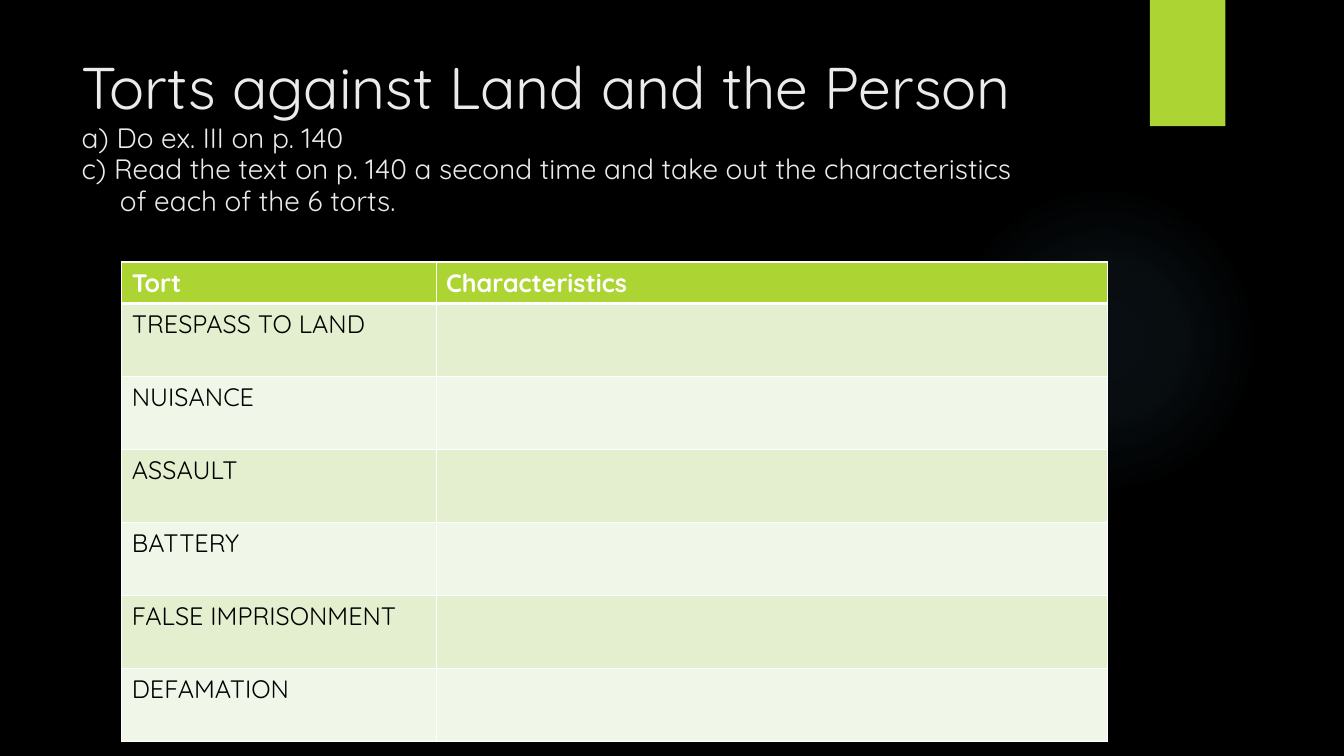
from lxml import etree
from pptx import Presentation
from pptx.dml.color import RGBColor
from pptx.enum.shapes import MSO_SHAPE as Shape
from pptx.enum.text import MSO_ANCHOR as Anchor, MSO_AUTO_SIZE as AutoSize, PP_ALIGN as Align
from pptx.oxml import parse_xml
from pptx.oxml.ns import nsdecls, qn
from pptx.util import Cm, Pt

TORTS = ["TRESPASS TO LAND", "NUISANCE", "ASSAULT", "BATTERY",
         "FALSE IMPRISONMENT", "DEFAMATION"]


def color(hex_string):
    return RGBColor.from_string(hex_string)


class TortSlide:
    FONT = "Quicksand"
    ACCENT, GLOW, LIGHT = "ACD433", "7AC4F0", "EBEBEB"
    WHITE, BLACK = "FFFFFF", "000000"
    BANDS = ["E3EFCE", "F1F7E8"]

    def __init__(self, deck):
        self.slide = deck.slides.add_slide(deck.slide_layouts[5])
        background = self.slide.background.fill
        background.solid()
        background.fore_color.rgb = color(self.BLACK)

    def style(self, paragraph, size, ink, bold=False):
        font = paragraph.font
        font.name, font.size, font.bold = self.FONT, Pt(size), bold
        font.color.rgb = color(ink)

    def block(self, kind, left, top, width, height):
        shape = self.slide.shapes.add_shape(kind, Cm(left), Cm(top), Cm(width), Cm(height))
        shape.shadow.inherit = False
        shape.line.fill.background()
        shape.fill.solid()
        shape.fill.fore_color.rgb = color(self.ACCENT)
        return shape

    def glow(self, left, top, size):
        halo = self.block(Shape.OVAL, left, top, size, size)
        stops = "".join(
            f'<a:gs pos="{place * 1000}"><a:srgbClr val="{self.GLOW}">'
            f'<a:alpha val="{opacity * 1000}"/></a:srgbClr></a:gs>'
            for place, opacity in [(0, 7), (36, 6), (69, 0), (100, 0)])
        gradient = parse_xml(
            f'<a:gradFill {nsdecls("a")} rotWithShape="1"><a:gsLst>{stops}</a:gsLst>'
            '<a:path path="circle"><a:fillToRect l="50000" t="50000" r="50000" b="50000"/>'
            '</a:path></a:gradFill>')
        properties = halo.element.spPr
        properties.replace(properties.find(qn("a:solidFill")), gradient)

    def title(self, heading, tasks, left, top, width, height):
        holder = self.slide.shapes.title
        holder.left, holder.top, holder.width, holder.height = map(Cm, (left, top, width, height))
        frame = holder.text_frame
        frame.word_wrap, frame.auto_size = True, AutoSize.NONE
        frame.vertical_anchor = Anchor.TOP
        frame.text = "\n".join([heading, *tasks])
        for number, paragraph in enumerate(frame.paragraphs):
            paragraph.alignment = Align.LEFT
            paragraph.line_spacing = 0.95
            paragraph.space_before = Pt(0)
            if number:
                # Hanging indent for the lettered tasks
                layout = paragraph._p.get_or_add_pPr()
                layout.set("marL", str(Cm(0.97)))
                layout.set("indent", str(-Cm(0.97)))
            self.style(paragraph, 20 if number else 42, self.LIGHT)

    def border(self, cell, side, width):
        line = etree.SubElement(cell._tc.get_or_add_tcPr(), qn(f"a:{side}"), w=str(Pt(width)))
        fill = etree.SubElement(line, qn("a:solidFill"))
        etree.SubElement(fill, qn("a:srgbClr"), val=self.WHITE)

    def table(self, rows, left, top, widths, heights):
        grid = self.slide.shapes.add_table(
            len(rows), len(widths), Cm(left), Cm(top), Cm(sum(widths)), Cm(sum(heights))).table
        for column, width in zip(grid.columns, widths):
            column.width = Cm(width)
        for r, (texts, height) in enumerate(zip(rows, heights)):
            grid.rows[r].height = Cm(height)
            for c, text in enumerate(texts):
                cell = grid.cell(r, c)
                cell.text = text
                header = r == 0
                self.style(cell.text_frame.paragraphs[0], 18,
                           self.WHITE if header else self.BLACK, header)
                # Borders precede the fill in the cell properties
                for side in ("lnL", "lnR", "lnT", "lnB"):
                    under_header = (r, side) in [(0, "lnB"), (1, "lnT")]
                    self.border(cell, side, 3 if under_header else 1)
                cell.fill.solid()
                cell.fill.fore_color.rgb = color(
                    self.ACCENT if header else self.BANDS[(r - 1) % 2])


def main():
    deck = Presentation()
    deck.slide_width, deck.slide_height = Cm(33.87), Cm(19.05)
    page = TortSlide(deck)

    # Decoration
    page.glow(23.9, 4.65, 7.82)
    page.block(Shape.RECTANGLE, 28.98, 0, 1.9, 3.18)

    # Heading and tasks
    page.title("Torts against Land and the Person",
               ["a) Do ex. III on p. 140",
                "c) Read the text on p. 140 a second time and take out the characteristics"
                "\vof each of the 6 torts."],
               1.8, 1.27, 26.14, 3.89)

    # Table to fill in
    rows = [("Tort", "Characteristics")] + [(tort, "") for tort in TORTS]
    page.table(rows, 3.07, 6.6, [7.92, 16.93], [1.05] + [1.84] * len(TORTS))

    deck.save("out.pptx")


if __name__ == "__main__":
    main()
